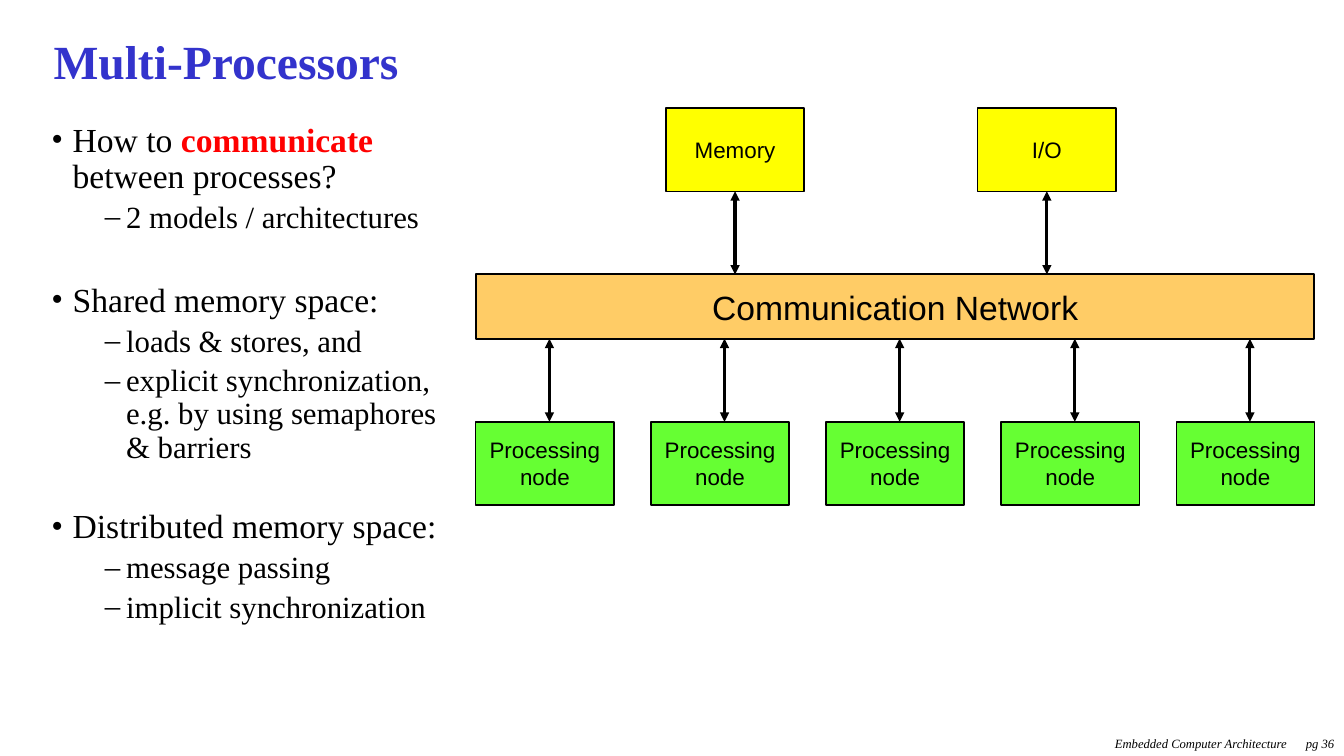
"""Build the slide on multi-processors and their communication network."""
from pptx import Presentation, util as u
from pptx.dml.color import RGBColor
from pptx.enum import shapes, text
from pptx.oxml import ns
from lxml import etree

HUES = {"ink": "000000", "title": "3333CC", "alert": "FF0000",
        "net": "FFCC66", "node": "66FF33", "unit": "FFFF00"}
SERIF, SANS = "Times New Roman", "Arial"
LEFT, MID, RIGHT = text.PP_ALIGN.LEFT, text.PP_ALIGN.CENTER, text.PP_ALIGN.RIGHT


def rgb(hue):
    return RGBColor.from_string(HUES[hue])


def tag(host, name, **attrs):
    return etree.SubElement(host, ns.qn(name), attrs)


def write(para, words, size=16, face=SANS, hue="ink", bold=False, slant=False, align=None):
    """Add words to a paragraph, turning each newline into a line break."""
    if align is not None:
        para.alignment = align
    for i, line in enumerate(words.split("\n")):
        if i:
            para.add_line_break()
        if line:
            run = para.add_run()
            run.text = line
            font = run.font
            font.size, font.name = u.Pt(size), face
            font.bold, font.italic = bold, slant
            font.color.rgb = rgb(hue)


class Deck:
    """Hold the style and the slide; lengths are hundredths of its width and height."""

    def __init__(self):
        self.prs = Presentation()
        self.prs.slide_width, self.prs.slide_height = u.Inches(13.33), u.Inches(7.5)
        self.slide = self.prs.slides.add_slide(self.prs.slide_layouts[1])

    def x(self, cols):
        return round(self.prs.slide_width * cols / 100)

    def y(self, rows):
        return round(self.prs.slide_height * rows / 100)

    def rect(self, x, y, w, h):
        return self.x(x), self.y(y), self.x(w), self.y(h)

    def place(self, item, *area):
        item.left, item.top, item.width, item.height = self.rect(*area)
        frame = item.text_frame
        frame.auto_size = text.MSO_AUTO_SIZE.NONE
        return frame

    def title(self, words, *area):
        frame = self.place(self.slide.shapes.title, *area)
        frame.vertical_anchor = text.MSO_ANCHOR.MIDDLE
        para = frame.paragraphs[0]
        para.line_spacing = 0.8
        write(para, words, 34, SERIF, "title", bold=True, align=LEFT)

    def bullets(self, items, *area):
        frame = self.place(self.slide.placeholders[1], *area)
        frame.vertical_anchor = text.MSO_ANCHOR.TOP
        for i, (level, gap, parts) in enumerate(items):
            para = frame.add_paragraph() if i else frame.paragraphs[0]
            para.level, para.line_spacing = level, 0.9
            para.space_before, para.space_after = u.Pt(gap), u.Pt(0)
            props = para._p.get_or_add_pPr()
            props.set("marL", str(u.Inches((0.21, 0.74)[level])))
            props.set("indent", str(u.Inches(-0.21)))
            tag(props, "a:buFont", typeface=SERIF)
            tag(props, "a:buChar", char="•–"[level])
            for words, style in parts:
                write(para, words, (24, 22)[level], SERIF, **style)

    def box(self, words, hue, *area, size=16, edge=1):
        item = self.slide.shapes.add_shape(shapes.MSO_SHAPE.RECTANGLE, *self.rect(*area))
        item.shadow.inherit = False
        item.fill.solid()
        item.fill.fore_color.rgb = rgb(hue)
        item.line.color.rgb, item.line.width = rgb("ink"), u.Pt(edge)
        frame = item.text_frame
        frame.word_wrap, frame.vertical_anchor = False, text.MSO_ANCHOR.MIDDLE
        for i, line in enumerate(words.split("\n")):
            para = frame.add_paragraph() if i else frame.paragraphs[0]
            write(para, line, size, align=MID)
        return item

    def arrow(self, x, top, end, start=None):
        link = self.slide.shapes.add_connector(
            shapes.MSO_CONNECTOR.STRAIGHT, self.x(x), self.y(top), self.x(x), self.y(end))
        if start is not None:
            link.begin_connect(start, 2)
        link.line.color.rgb, link.line.width = rgb("ink"), u.Pt(2.25)
        props = link._element.spPr
        for name in ("a:headEnd", "a:tailEnd"):
            tag(props.find(ns.qn("a:ln")), name, type="triangle")
        tag(props, "a:effectLst")

    def note(self, words, *area):
        item = self.slide.shapes.add_textbox(*self.rect(*area))
        item.text_frame.word_wrap = True
        write(item.text_frame.paragraphs[0], words, 9, SERIF, slant=True, align=RIGHT)


def main():
    deck = Deck()
    deck.title("Multi-Processors", 3.23, 3.33, 93.47, 10.67)
    deck.bullets([
        (0, 4.8, [("How to ", {}), ("communicate\n", {"hue": "alert", "bold": True}),
                  ("between processes?", {})]),
        (1, 4.4, [("2 models / architectures", {})]),
        (0, 34.5, [("Shared memory space:", {})]),
        (1, 4.4, [("loads & stores, and", {})]),
        (1, 4.4, [("explicit synchronization,\ne.g. by using semaphores\n& barriers", {})]),
        (0, 32, [("Distributed memory space:", {})]),
        (1, 4.4, [("message passing", {})]),
        (1, 4.4, [("implicit synchronization", {})]),
    ], 3.08, 15.6, 51.09, 78.8)

    left, span, wide, tall = 35.4, 62.4, 10.28, 11
    top, net, deep, low = 14.3, 36.3, 8.5, 55.8
    deck.box("Communication Network", "net", left, net, span, deep, size=24, edge=1.5)
    step = (span - wide) / 4
    for i in range(5):
        x = left + i * step
        deck.box("Processing\nnode", "node", x, low, wide, tall)
        deck.arrow(x + 5.48, net + deep, low)
    for words, x in (("Memory", 49.55), ("I/O", 72.75)):
        unit = deck.box(words, "unit", x, top, wide, tall)
        deck.arrow(x + wide / 2, top + tall, net, unit)

    deck.note("Embedded Computer Architecture", 71.27, 96.67, 25.2, 3.33)
    deck.note("pg 36", 94, 96.67, 6, 3.33)
    deck.prs.save("out.pptx")


if __name__ == "__main__":
    main()
